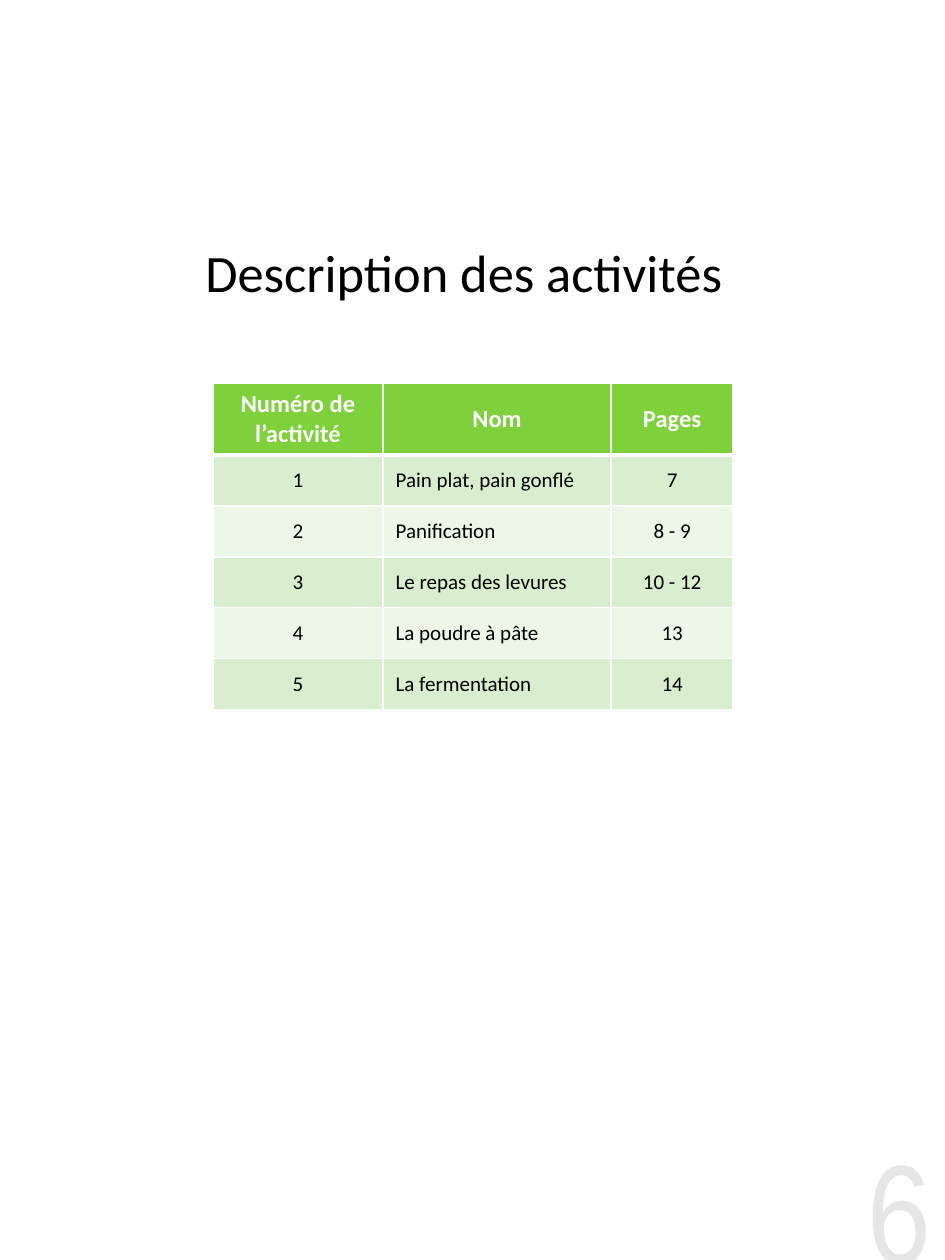
from lxml import etree
from pptx import Presentation
from pptx import util as u
from pptx.dml.color import RGBColor
from pptx.enum import text
from pptx.oxml.ns import qn

Pt = u.Pt
CENTER, LEFT, RIGHT = text.PP_ALIGN.CENTER, text.PP_ALIGN.LEFT, text.PP_ALIGN.RIGHT
MIDDLE, TOP = text.MSO_ANCHOR.MIDDLE, text.MSO_ANCHOR.TOP


def rgb(color):
    return RGBColor.from_string(color)


def write(tf, content, align, color, **fmt):
    """Fill a text frame, one paragraph per line."""
    tf.word_wrap = True
    for i, line in enumerate(content.split("\n")):
        p = tf.paragraphs[0] if i == 0 else tf.add_paragraph()
        p.alignment = align
        r = p.add_run()
        r.text = line
        for name, value in {"name": "Calibri", **fmt}.items():
            setattr(r.font, name, value)
        r.font.color.rgb = rgb(color)


prs = Presentation()
prs.slide_width, prs.slide_height = Pt(540), Pt(720)
s = prs.slides.add_slide(prs.slide_layouts[6])

# Title and page number
boxes = [
    ("Description des activités ", (29.5, 121, 478, 68.4), MIDDLE, CENTER, "000000",
     {"size": Pt(30)}),
    ("6", (480, 642, 52.5, 78), TOP, RIGHT, "E6E6E6",
     {"size": Pt(80), "name": "Arial Narrow"}),
]
for content, place, anchor, align, color, fmt in boxes:
    tf = s.shapes.add_textbox(*map(Pt, place)).text_frame
    tf.margin_left = tf.margin_top = tf.margin_right = tf.margin_bottom = 0
    tf.vertical_anchor = anchor
    write(tf, content, align, color, **fmt)

# Activity table
rows = [
    ("Numéro de\nl’activité", "Nom", "Pages"),
    ("1", "Pain plat, pain gonflé", "7"),
    ("2", "Panification", "8 - 9"),
    ("3", "Le repas des levures", "10 - 12"),
    ("4", "La poudre à pâte", "13"),
    ("5", "La fermentation", "14"),
]
widths = [97.2, 130.3, 69.8]
heights = [41] + [29.1] * 5
table = s.shapes.add_table(len(rows), len(widths), Pt(121.7), Pt(219),
                           Pt(sum(widths)), Pt(sum(heights))).table
for column, width in zip(table.columns, widths):
    column.width = Pt(width)

for i, values in enumerate(rows):
    table.rows[i].height = Pt(heights[i])
    header = i == 0
    fill = "7FD13B" if header else ("ECF7E8", "D8EECE")[i % 2]
    for j, value in enumerate(values):
        cell = table.cell(i, j)
        cell.vertical_anchor = MIDDLE
        align = LEFT if j == 1 and not header else CENTER
        write(cell.text_frame, value, align, "FFFFFF" if header else "000000",
              size=Pt(14 if header else 12), bold=header)

        # White borders, thicker under the header
        tcPr = cell._tc.get_or_add_tcPr()
        for side in ("L", "R", "T", "B"):
            thick = (i, side) in ((0, "B"), (1, "T"))
            ln = etree.SubElement(tcPr, qn("a:ln" + side), w=str(Pt(3 if thick else 1)))
            solid = etree.SubElement(ln, qn("a:solidFill"))
            etree.SubElement(solid, qn("a:srgbClr"), val="FFFFFF")
        cell.fill.solid()
        cell.fill.fore_color.rgb = rgb(fill)

prs.save("out.pptx")
